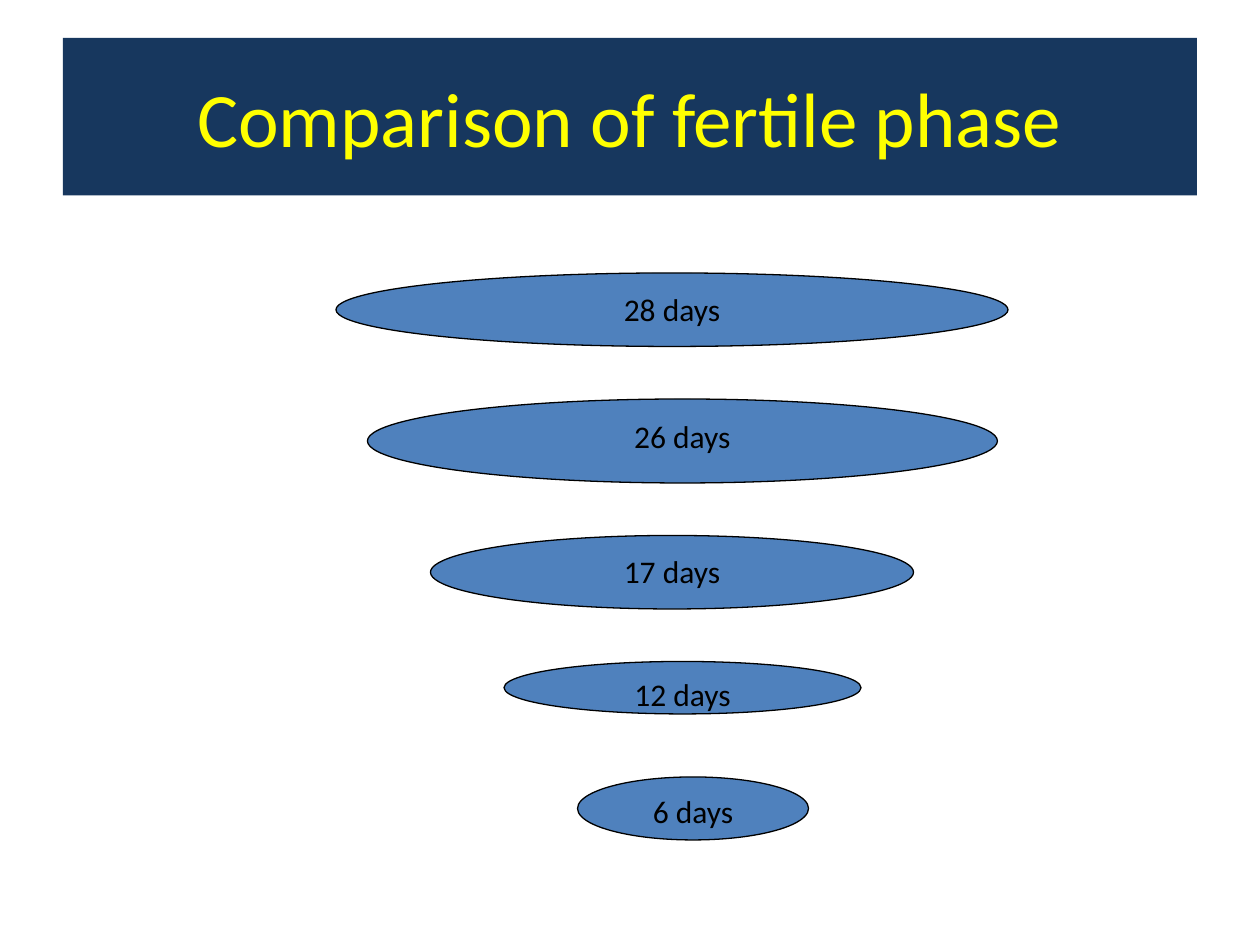
from pptx import Presentation
from pptx.dml.color import RGBColor
from pptx.enum import shapes, text
from pptx.util import Pt

SLIDE_SIZE = (720, 540)
TITLE = "Comparison of fertile phase"
TITLE_BOX = (36, 21.6, 648, 90)
PHASES = [
    ("28 days", (192, 156, 384, 42)),
    ("26 days", (210, 228, 360, 48)),
    ("17 days", (246, 306, 276, 42)),
    ("12 days", (288, 378, 204, 30)),
    ("6 days", (330, 444, 132, 36)),
]
NAVY, BLUE, YELLOW, BLACK = "17375E", "4F81BD", "FFFF00", "000000"
FRAME = {"word_wrap": True, "margin_left": Pt(7.2), "margin_right": Pt(7.2),
         "margin_top": Pt(3.6), "margin_bottom": Pt(3.6)}


def color(value):
    return RGBColor.from_string(value)


def apply_format(target, values):
    for name, value in values.items():
        setattr(target, name, value)


def add_label(slide, kind, box, wording, fill, font_color, size, anchor, outline=None):
    shape = slide.shapes.add_shape(kind, *map(Pt, box))
    shape.shadow.inherit = False
    shape.fill.solid()
    shape.fill.fore_color.rgb = color(fill)
    if outline:
        shape.line.color.rgb = color(outline)
        shape.line.width = Pt(0.75)
    else:
        shape.line.fill.background()
    frame = shape.text_frame
    apply_format(frame, {**FRAME, "vertical_anchor": anchor})
    paragraph = frame.paragraphs[0]
    paragraph.alignment = text.PP_ALIGN.CENTER
    run = paragraph.add_run()
    run.text = wording
    apply_format(run.font, {"name": "Calibri", "size": Pt(size)})
    run.font.color.rgb = color(font_color)


def main():
    presentation = Presentation()
    presentation.slide_width, presentation.slide_height = map(Pt, SLIDE_SIZE)
    slide = presentation.slides.add_slide(presentation.slide_layouts[6])
    add_label(slide, shapes.MSO_SHAPE.RECTANGLE, TITLE_BOX, TITLE,
              NAVY, YELLOW, 44, text.MSO_ANCHOR.MIDDLE)
    for wording, box in PHASES:
        add_label(slide, shapes.MSO_SHAPE.OVAL, box, wording,
                  BLUE, BLACK, 18, text.MSO_ANCHOR.TOP, BLACK)
    presentation.save("out.pptx")


if __name__ == "__main__":
    main()
